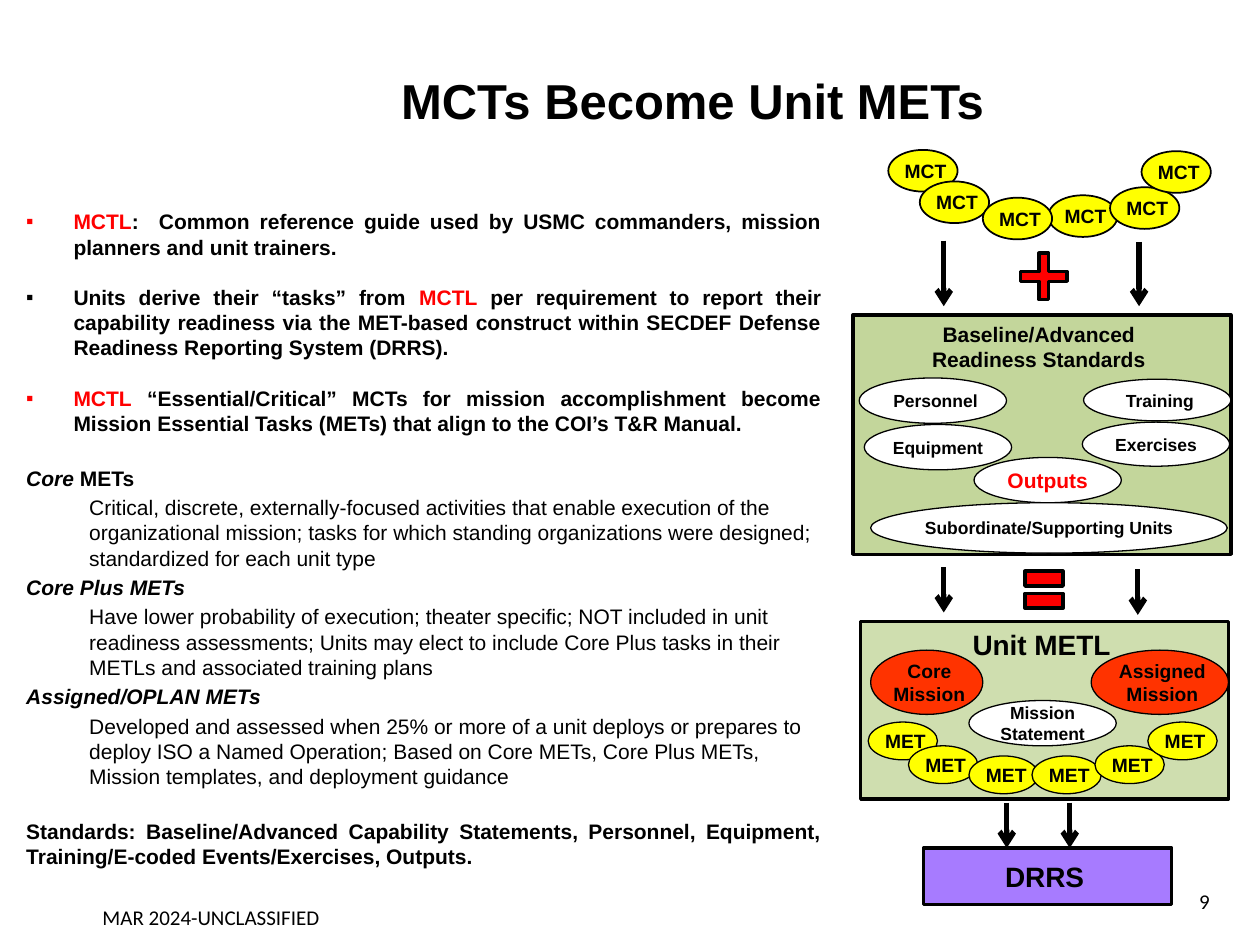
from dataclasses import dataclass

from pptx import Presentation
from pptx.dml.color import RGBColor
from pptx.enum.shapes import MSO_CONNECTOR, MSO_SHAPE
from pptx.enum.text import MSO_ANCHOR, PP_ALIGN
from pptx.oxml.ns import qn
from pptx.util import Pt

RECT, OVAL = MSO_SHAPE.RECTANGLE, MSO_SHAPE.OVAL
PLUS, EQUALS = MSO_SHAPE.CROSS, MSO_SHAPE.MATH_EQUAL
STRAIGHT = MSO_CONNECTOR.STRAIGHT
TOP, MIDDLE = MSO_ANCHOR.TOP, MSO_ANCHOR.MIDDLE
LEFT, CENTER = PP_ALIGN.LEFT, PP_ALIGN.CENTER
RIGHT, JUSTIFY = PP_ALIGN.RIGHT, PP_ALIGN.JUSTIFY


@dataclass(frozen=True)
class Theme:
    font: str = "Arial"
    footer_font: str = "Calibri"
    black: str = "000000"
    white: str = "FFFFFF"
    red: str = "FF0000"
    mission: str = "FF3300"
    yellow: str = "FFFF00"
    green: str = "C3D69B"
    purple: str = "9966FF"
    title: float = 28
    heading: float = 16
    body: float = 12
    token: float = 11
    label: float = 10
    blank_line: float = 14.4
    small_gap: float = 2.4


THEME = Theme()
PANEL_MARGINS = (3.6, 3.6, 7.2, 3.6)
OVAL_MARGINS = (0, 0, 0, 0)
NUDGED_MARGINS = (3, 0, 0, 0)
TEXT_MARGINS = (7.2, 3.6, 7.2, 3.6)

PLAIN = {}
BOLD = {"bold": True}
ITALIC = {"bold": True, "italic": True}
RED = {"bold": True, "color": THEME.red}

BULLETS = [
    [("MCTL", RED),
     (":  Common reference guide used by USMC commanders, mission planners and unit trainers.", BOLD)],
    [("Units derive their “tasks” from ", BOLD), ("MCTL", RED),
     (" per requirement to report their capability readiness via the MET-based construct "
      "within SECDEF Defense Readiness Reporting System (DRRS).", BOLD)],
    [("MCTL", RED),
     (" “Essential/Critical” MCTs for mission accomplishment become Mission Essential Tasks "
      "(METs) that align to the COI’s T&R Manual.", BOLD)],
]
DEFINITIONS = [
    ([("Core", ITALIC), (" METs", BOLD)],
     "Critical, discrete, externally-focused activities that enable execution of the "
     "organizational mission; tasks for which standing organizations were designed; "
     "standardized for each unit type"),
    ([("Core Plus METs", ITALIC)],
     "Have lower probability of execution; theater specific; NOT included in unit readiness "
     "assessments; Units may elect to include Core Plus tasks in their METLs and associated "
     "training plans"),
    ([("Assigned/OPLAN METs", ITALIC)],
     "Developed and assessed when 25% or more of a unit deploys or prepares to deploy ISO a "
     "Named Operation; Based on Core METs, Core Plus METs, Mission templates, and deployment "
     "guidance"),
]
STANDARDS = ("Standards: Baseline/Advanced Capability Statements, Personnel, Equipment, "
             "Training/E-coded Events/Exercises, Outputs.")

# left, top, width, height, label, margins, colour, size
STANDARD_OVALS = [
    (491, 216, 84.2, 25.9, "Personnel", NUDGED_MARGINS, THEME.black, THEME.label),
    (493.9, 242.6, 84.2, 25.9, "Equipment", OVAL_MARGINS, THEME.black, THEME.label),
    (556.6, 261.4, 84.2, 25.9, "Outputs", OVAL_MARGINS, THEME.red, THEME.body),
    (497.5, 287.3, 203.8, 28.8, "Subordinate/Supporting Units", OVAL_MARGINS, THEME.black, THEME.label),
    (619.2, 216.7, 84.2, 23.8, "Training", NUDGED_MARGINS, THEME.black, THEME.label),
    (618.5, 241.2, 84.2, 25.2, "Exercises", OVAL_MARGINS, THEME.black, THEME.label),
    (553.7, 400.3, 84.2, 25.9, "Mission Statement", OVAL_MARGINS, THEME.black, THEME.label),
]
MCT_SPOTS = [(507.6, 85.7), (525.6, 103.7), (599, 111.6),
             (634.3, 107), (561.6, 113), (652.3, 86.4)]
MET_SPOTS = [(496.1, 412.6), (519.1, 426.2), (553.7, 432),
             (589.7, 432), (625.7, 426.2), (655.9, 412.6)]
# x, top, bottom
ARROWS = [(539.3, 137.5, 175), (650.9, 138.2, 175), (539.3, 324, 350),
          (650.2, 325.4, 351.4), (575.3, 458.6, 484.6), (611.3, 458.6, 484.6)]


def set_values(target, values):
    for name, value in values.items():
        setattr(target, name, value)


def box(left, top, width, height):
    return Pt(left), Pt(top), Pt(width), Pt(height)


def prepare_frame(shape, margins, anchor):
    frame = shape.text_frame
    sides = ("margin_left", "margin_top", "margin_right", "margin_bottom")
    set_values(frame, {"word_wrap": True, "vertical_anchor": anchor,
                       **{side: Pt(size) for side, size in zip(sides, margins)}})
    return frame


def write_runs(paragraph, runs, size=THEME.body, font=THEME.font):
    for text, style in runs:
        run = paragraph.add_run()
        run.text = text
        set_values(run.font, {"name": font, "size": Pt(size),
                              "bold": style.get("bold", False),
                              "italic": style.get("italic", False)})
        run.font.color.rgb = RGBColor.from_string(style.get("color", THEME.black))


def add_text(slide, place, text, size, align, style=PLAIN, font=THEME.font):
    frame = prepare_frame(slide.shapes.add_textbox(*box(*place)), TEXT_MARGINS, MIDDLE)
    frame.paragraphs[0].alignment = align
    write_runs(frame.paragraphs[0], [(text, style)], size, font)


def add_figure(slide, kind, place, fill, weight, opacity=100):
    shape = slide.shapes.add_shape(kind, *box(*place))
    shape.shadow.inherit = False
    shape.fill.solid()
    shape.fill.fore_color.rgb = RGBColor.from_string(fill)
    shape.line.color.rgb = RGBColor.from_string(THEME.black)
    shape.line.width = Pt(weight)
    if opacity < 100:
        color = shape.element.spPr.find(qn("a:solidFill"))[0]
        color.makeelement(qn("a:alpha"), {})
        alpha = color.makeelement(qn("a:alpha"), {"val": str(opacity * 1000)})
        color.append(alpha)
    return shape


def add_labels(shape, lines, size, margins, anchor=MIDDLE, color=THEME.black):
    """Write bold centred lines inside a shape."""
    frame = prepare_frame(shape, margins, anchor)
    for index, line in enumerate(lines):
        paragraph = frame.add_paragraph() if index else frame.paragraphs[0]
        paragraph.alignment = CENTER
        write_runs(paragraph, [(line, {"bold": True, "color": color})], size)


def add_oval(slide, place, label, fill, size, margins, color=THEME.black, weight=0.75):
    oval = add_figure(slide, OVAL, place, fill, weight)
    add_labels(oval, [label], size, margins, color=color)


def add_arrow(slide, x, top, bottom):
    arrow = slide.shapes.add_connector(STRAIGHT, Pt(x), Pt(top), Pt(x), Pt(bottom))
    arrow.line.color.rgb = RGBColor.from_string(THEME.black)
    arrow.line.width = Pt(3)
    line = arrow.line._get_or_add_ln()
    line.append(line.makeelement(qn("a:tailEnd"), {"type": "arrow"}))
    properties = arrow.element.spPr
    properties.append(properties.makeelement(qn("a:effectLst"), {}))


def indent(paragraph, margin, first=0, bullet=None):
    properties = paragraph._p.get_or_add_pPr()
    properties.set("marL", str(Pt(margin)))
    properties.set("indent", str(Pt(first)))
    if bullet:
        for tag, values in (("a:buFont", {"typeface": THEME.font}), ("a:buChar", {"char": bullet})):
            properties.append(properties.makeelement(qn(tag), values))


def add_body(slide):
    frame = prepare_frame(slide.shapes.add_textbox(*box(7.9, 115.9, 468.7, 401)), TEXT_MARGINS, TOP)
    section_gap = THEME.blank_line + THEME.small_gap

    def add_paragraph(runs, align, gap):
        paragraph = frame.add_paragraph() if frame.text else frame.paragraphs[0]
        set_values(paragraph, {"alignment": align, "space_before": Pt(gap)})
        write_runs(paragraph, runs)
        return paragraph

    for index, runs in enumerate(BULLETS):
        bullet = add_paragraph(runs, JUSTIFY, THEME.blank_line if index else 0)
        indent(bullet, 27, -27, "▪")
    for index, (term, meaning) in enumerate(DEFINITIONS):
        add_paragraph(term, LEFT, THEME.small_gap if index else section_gap)
        explanation = add_paragraph([(meaning, PLAIN)], LEFT, THEME.small_gap)
        explanation.level = 1
        indent(explanation, 36)
    add_paragraph([(STANDARDS, BOLD)], JUSTIFY, section_gap)


def add_diagram(slide):
    metl = add_figure(slide, RECT, (491.8, 355, 210.2, 101.5), THEME.green, 2, 80)
    add_labels(metl, ["Unit METL"], THEME.heading, PANEL_MARGINS, TOP)
    drrs = add_figure(slide, RECT, (527.8, 484.6, 141.8, 32.4), THEME.purple, 2, 86)
    add_labels(drrs, ["DRRS"], THEME.heading, PANEL_MARGINS)
    standards = add_figure(slide, RECT, (487.4, 180, 216, 136.8), THEME.green, 2)
    add_labels(standards, ["Baseline/Advanced", "Readiness Standards"], THEME.body, PANEL_MARGINS, TOP)
    for left, width, label in ((497.5, 64.1, "Core Mission"), (623.5, 78.5, "Assigned Mission")):
        add_oval(slide, (left, 371.5, width, 36.7), label, THEME.mission, THEME.token, NUDGED_MARGINS)
    for *place, label, margins, color, size in STANDARD_OVALS:
        add_oval(slide, place, label, THEME.white, size, margins, color)
    for label, spots, height, weight in (("MCT", MCT_SPOTS, 23.8, 1), ("MET", MET_SPOTS, 21.6, 0.75)):
        for left, top in spots:
            add_oval(slide, (left, top, 39.6, height), label, THEME.yellow, THEME.token,
                     NUDGED_MARGINS, weight=weight)
    plus = add_figure(slide, PLUS, (583.2, 144.7, 26.6, 26.6), THEME.red, 2)
    plus.adjustments[0] = 0.395
    add_figure(slide, EQUALS, (581.8, 319, 29.5, 36), THEME.red, 2)
    for arrow in ARROWS:
        add_arrow(slide, *arrow)


def main():
    deck = Presentation()
    set_values(deck, {"slide_width": Pt(720), "slide_height": Pt(540)})
    slide = deck.slides.add_slide(deck.slide_layouts[6])
    add_text(slide, (95.8, 30.2, 599.8, 54), "MCTs Become Unit METs", THEME.title, CENTER, BOLD)
    add_diagram(slide)
    add_body(slide)
    add_text(slide, (0, 509.8, 241.2, 28.8), "MAR 2024-UNCLASSIFIED", THEME.body, CENTER,
             font=THEME.footer_font)
    add_text(slide, (561.6, 500.4, 136.8, 28.8), "9", THEME.body, RIGHT, font=THEME.footer_font)
    deck.save("out.pptx")


if __name__ == "__main__":
    main()
